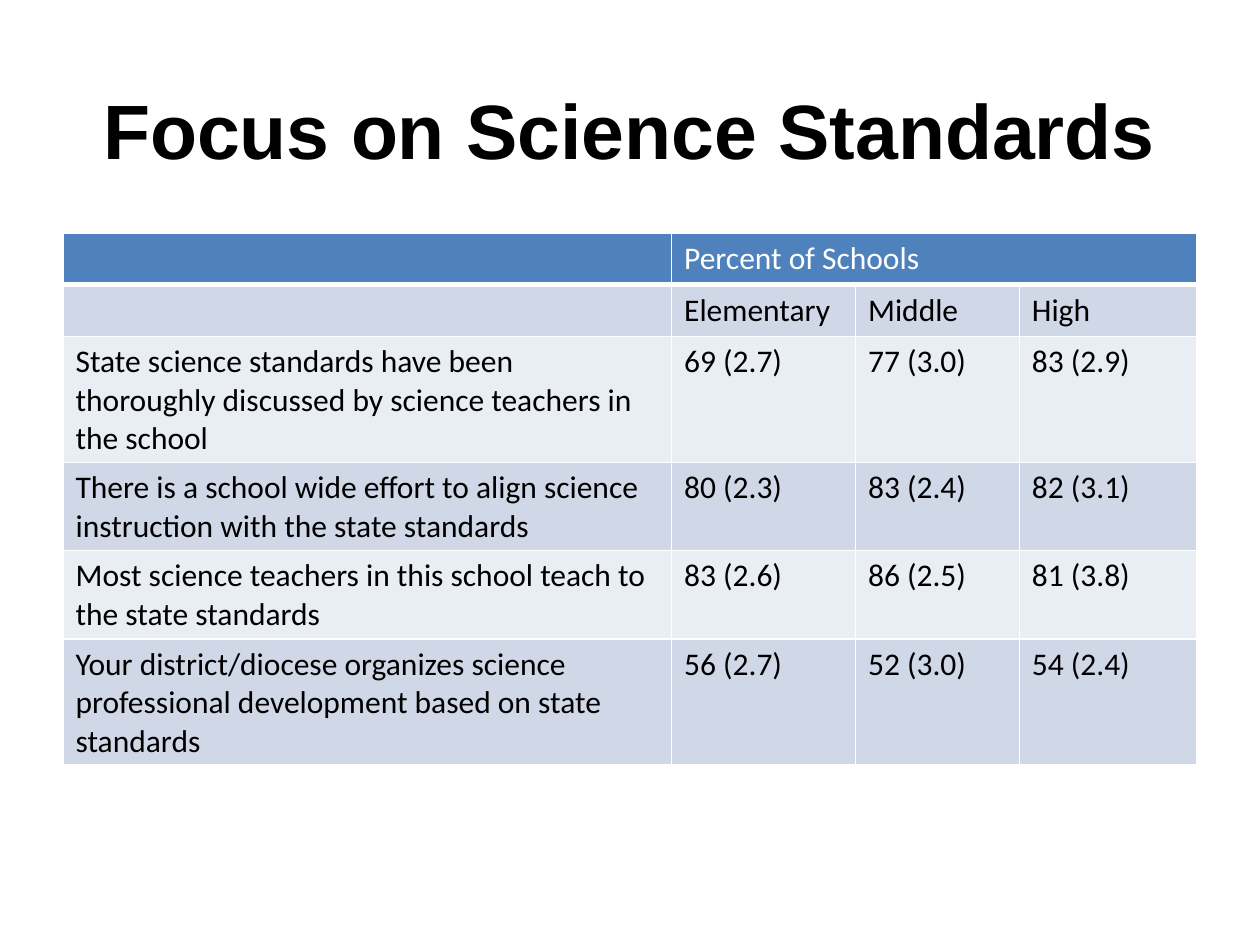
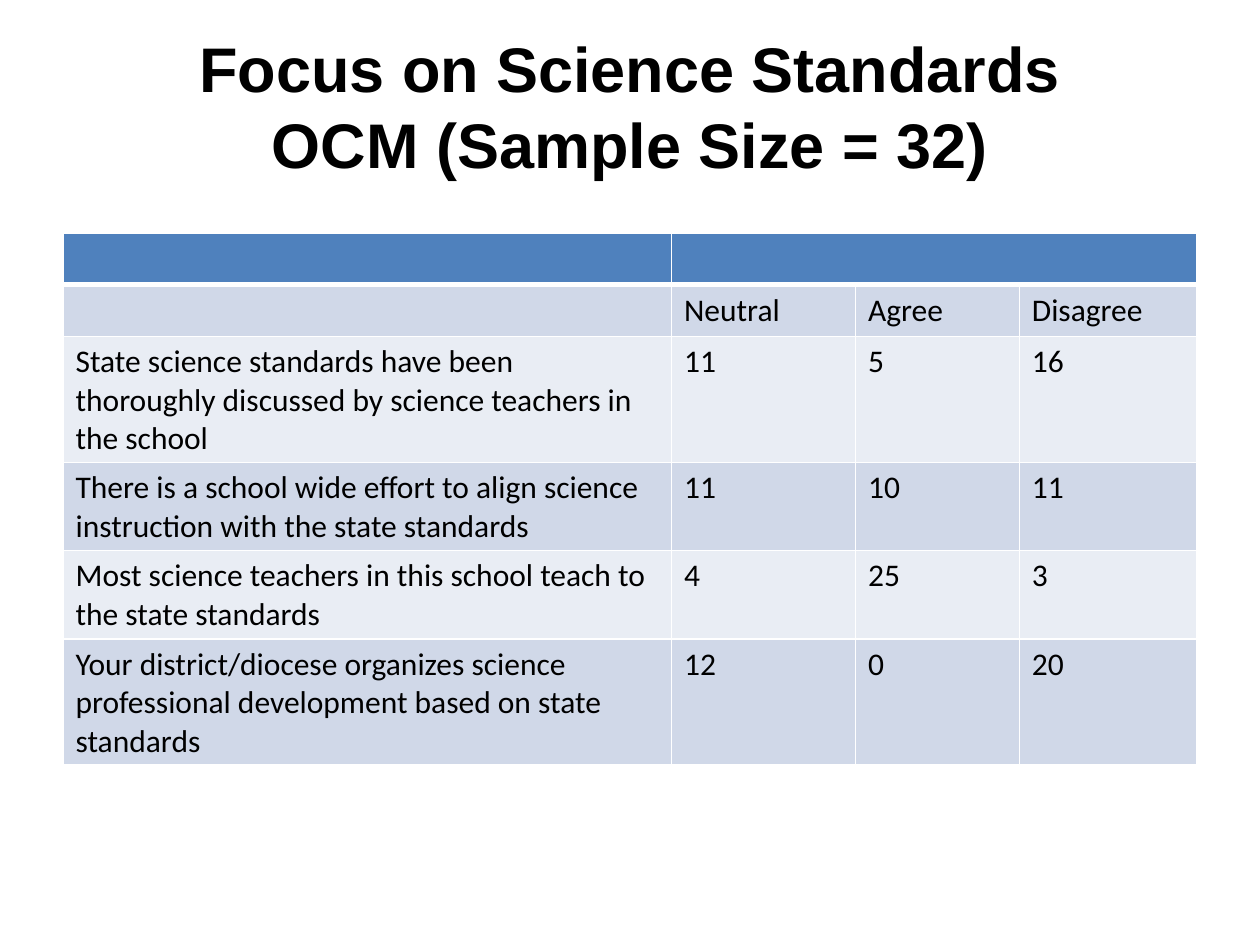
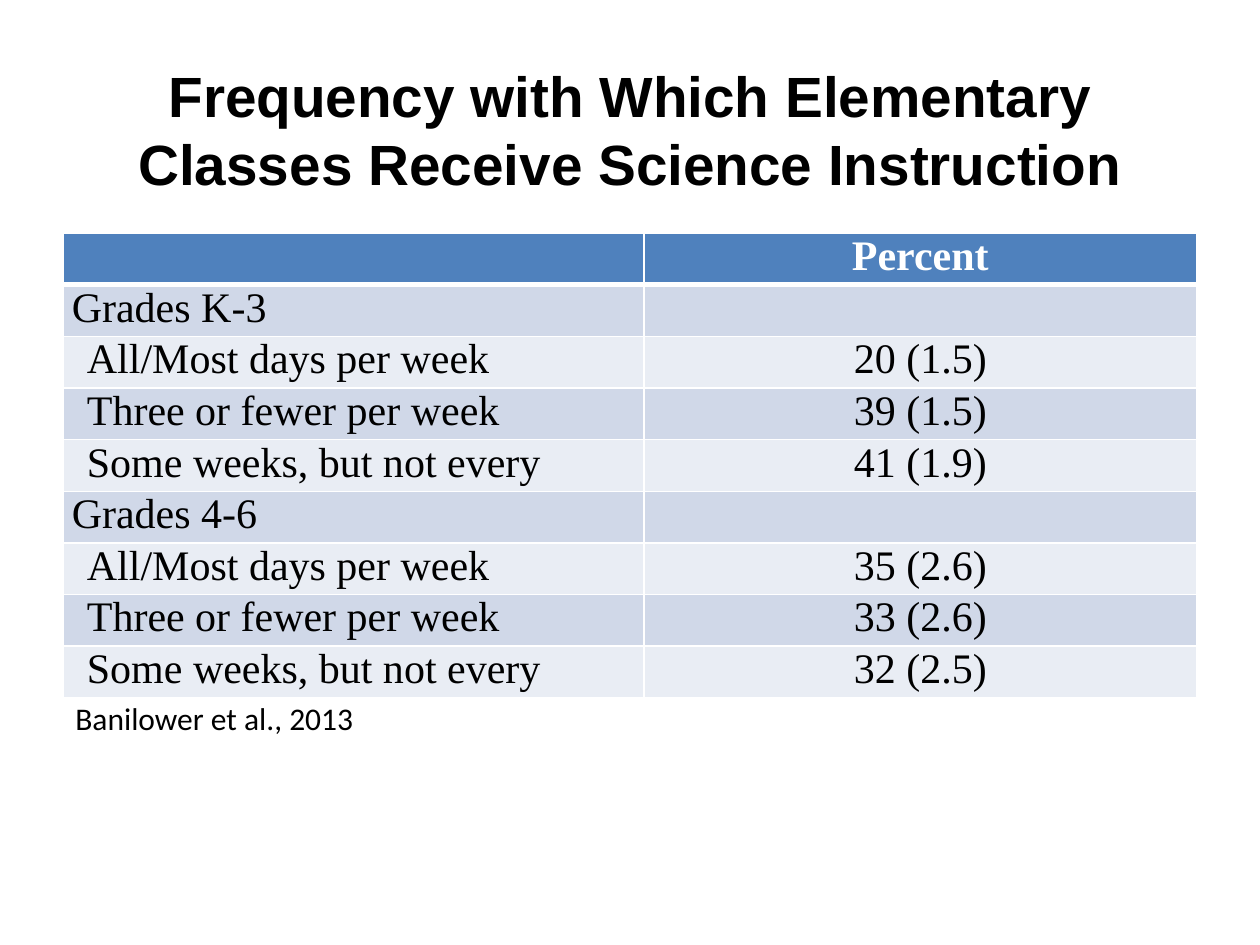
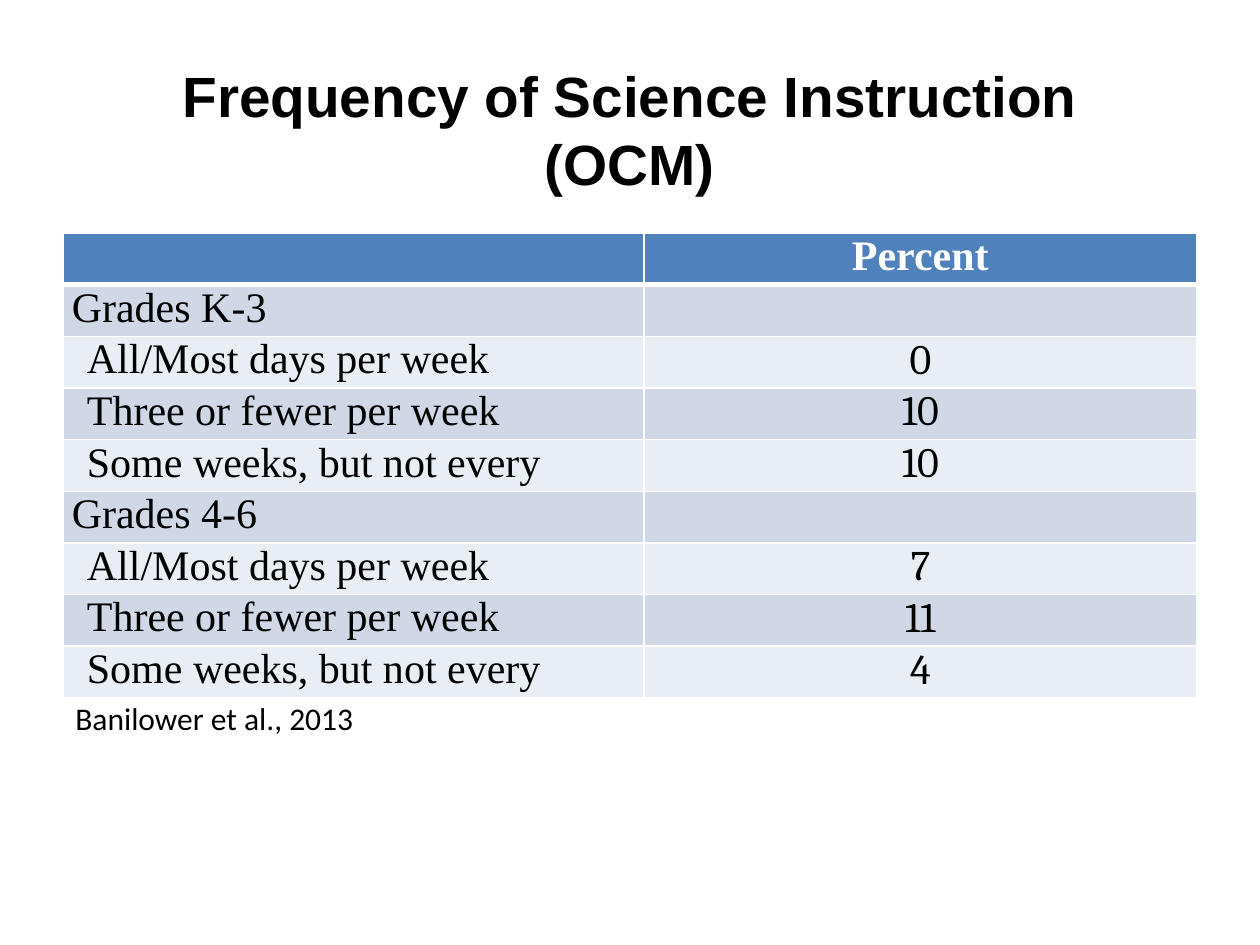
from dataclasses import dataclass

from lxml import etree
from pptx import Presentation
from pptx.dml.color import RGBColor
from pptx.enum import text as t
from pptx.oxml import ns
from pptx.util import Inches, Pt

BLACK = RGBColor(0x00, 0x00, 0x00)
WHITE = RGBColor(0xFF, 0xFF, 0xFF)
HEADER_BLUE = RGBColor(0x4F, 0x81, 0xBD)
BAND_DARK = RGBColor(0xD0, 0xD8, 0xE8)
BAND_LIGHT = RGBColor(0xE9, 0xED, 0xF4)

LEFT, TABLE_TOP, WIDTH = 0.5, 1.85, 9
THIN, THICK = 1, 3


@dataclass(frozen=True)
class Font:
    name: str
    size: float
    bold: bool = False
    color: RGBColor = BLACK


@dataclass(frozen=True)
class Title:
    lines: tuple[str, ...]
    size: float
    top: float = 0.4
    height: float = 1.25
    bottom_inset: float = 0.05


@dataclass(frozen=True)
class TableStyle:
    columns: tuple[float, ...]
    rows: tuple[float, ...]
    header: Font
    label: Font
    margins: tuple[float, float]
    value_align: t.PP_ALIGN
    below_header: int


@dataclass(frozen=True)
class TableSlide:
    title: Title
    style: TableStyle
    cells: list[tuple[str, ...]]
    value_font: Font
    merge_header: bool = False
    indented: tuple[str, ...] = ()
    source: str = ""


CALIBRI = Font("Calibri", 18)
TIMES = Font("Times New Roman", 24)
CAMBRIA = Font("Cambria", 24)

STANDARDS_STYLE = TableStyle(
    columns=(4.83, 1.46, 1.3, 1.41),
    rows=(0.41, 0.41, 1, 0.7, 0.7, 1),
    header=Font("Calibri", 18, color=WHITE),
    label=CALIBRI,
    margins=(0.1, 0.05),
    value_align=t.PP_ALIGN.LEFT,
    below_header=THIN,
)
FREQUENCY_STYLE = TableStyle(
    columns=(4.61, 4.39),
    rows=(0.41,) * 9,
    header=Font("Times New Roman", 24, True, WHITE),
    label=TIMES,
    margins=(0.07, 0),
    value_align=t.PP_ALIGN.CENTER,
    below_header=THICK,
)

STATEMENTS = (
    "State science standards have been thoroughly discussed by science teachers in the school",
    "There is a school wide effort to align science instruction with the state standards",
    "Most science teachers in this school teach to the state standards",
    "Your district/diocese organizes science professional development based on state standards",
)
GRADES = ("Grades K-3", "Grades 4-6")
FREQUENCIES = ("All/Most days per week", "Three or fewer per week", "Some weeks, but not every")
SOURCE = "Banilower et al., 2013"


def standards_slide(title: Title, heading: str, groups: tuple[str, ...],
                    values: list[tuple[str, ...]]) -> TableSlide:
    cells = [("", heading, "", ""), ("", *groups)]
    cells += [(statement, *row) for statement, row in zip(STATEMENTS, values)]
    return TableSlide(title, STANDARDS_STYLE, cells, CALIBRI, merge_header=True)


def frequency_slide(title: Title, values: list[tuple[str, ...]], value_font: Font) -> TableSlide:
    cells = [("", "Percent")]
    for grade, percents in zip(GRADES, values):
        cells += [(grade, ""), *zip(FREQUENCIES, percents)]
    return TableSlide(title, FREQUENCY_STYLE, cells, value_font,
                      indented=FREQUENCIES, source=SOURCE)


SLIDES = [
    standards_slide(
        Title(("Focus on Science Standards",), 44),
        "Percent of Schools", ("Elementary", "Middle", "High"),
        [("69 (2.7)", "77 (3.0)", "83 (2.9)"), ("80 (2.3)", "83 (2.4)", "82 (3.1)"),
         ("83 (2.6)", "86 (2.5)", "81 (3.8)"), ("56 (2.7)", "52 (3.0)", "54 (2.4)")],
    ),
    standards_slide(
        Title(("Focus on Science Standards", "OCM (Sample Size = 32)"), 36, 0.51, 1.19, 0.59),
        "", ("Neutral", "Agree", "Disagree"),
        [("11", "5", "16"), ("11", "10", "11"), ("4", "25", "3"), ("12", "0", "20")],
    ),
    frequency_slide(
        Title(("Frequency with Which Elementary Classes Receive Science Instruction",), 32.4),
        [("20 (1.5)", "39 (1.5)", "41 (1.9)"), ("35 (2.6)", "33 (2.6)", "32 (2.5)")], TIMES,
    ),
    frequency_slide(
        Title(("Frequency of Science Instruction", "(OCM)"), 32.4),
        [("0", "10", "10"), ("7", "11", "4")], CAMBRIA,
    ),
]


def add_run(paragraph, content: str, font: Font) -> None:
    run = paragraph.add_run()
    run.text = content
    run.font.name = font.name
    run.font.size = Pt(font.size)
    run.font.bold = font.bold
    run.font.color.rgb = font.color


def add_title(slide, title: Title) -> None:
    shape = slide.shapes.add_textbox(
        Inches(LEFT), Inches(title.top), Inches(WIDTH), Inches(title.height))
    frame = shape.text_frame
    frame.word_wrap = True
    frame.vertical_anchor = t.MSO_ANCHOR.MIDDLE
    frame.margin_bottom = Inches(title.bottom_inset)
    paragraph = frame.paragraphs[0]
    paragraph.alignment = t.PP_ALIGN.CENTER
    for index, line in enumerate(title.lines):
        if index:
            paragraph.add_line_break()
        add_run(paragraph, line, Font("Arial", title.size, True))


def add_source(slide, content: str) -> None:
    shape = slide.shapes.add_textbox(Inches(LEFT), Inches(5.5), Inches(2.43), Inches(0.4))
    shape.text_frame.word_wrap = False
    shape.text_frame.auto_size = t.MSO_AUTO_SIZE.SHAPE_TO_FIT_TEXT
    add_run(shape.text_frame.paragraphs[0], content, CALIBRI)


def set_borders(cell, top: int, bottom: int) -> None:
    properties = cell._tc.get_or_add_tcPr()
    for side, width in (("L", THIN), ("R", THIN), ("T", top), ("B", bottom)):
        line = etree.SubElement(properties, ns.qn(f"a:ln{side}"), w=str(Pt(width)))
        fill = etree.SubElement(line, ns.qn("a:solidFill"))
        etree.SubElement(fill, ns.qn("a:srgbClr"), val=str(WHITE))


def fill_cell(cell, row: int, column: int, content: str, data: TableSlide) -> None:
    style = data.style
    cell.margin_left = cell.margin_right = Inches(style.margins[0])
    cell.margin_top = cell.margin_bottom = Inches(style.margins[1])
    set_borders(cell, style.below_header if row == 1 else THIN, THIN if row else THICK)
    cell.fill.solid()
    cell.fill.fore_color.rgb = (BAND_DARK if row % 2 else BAND_LIGHT) if row else HEADER_BLUE
    if not content:
        return
    paragraph = cell.text_frame.paragraphs[0]
    if column:
        paragraph.alignment = style.value_align
    if content in data.indented:
        paragraph._p.get_or_add_pPr().set("marL", str(Inches(0.12)))
    body_font = data.value_font if column else style.label
    add_run(paragraph, content, body_font if row else style.header)


def add_data_table(slide, data: TableSlide) -> None:
    style = data.style
    table = slide.shapes.add_table(
        len(style.rows), len(style.columns), Inches(LEFT), Inches(TABLE_TOP),
        Inches(WIDTH), Inches(sum(style.rows))).table
    table.first_row = table.horz_banding = False
    for column, width in zip(table.columns, style.columns):
        column.width = Inches(width)
    for row, height in zip(table.rows, style.rows):
        row.height = Inches(height)
    if data.merge_header:
        table.cell(0, 1).merge(table.cell(0, len(style.columns) - 1))
    for row, contents in enumerate(data.cells):
        for column, content in enumerate(contents):
            fill_cell(table.cell(row, column), row, column, content, data)


def main() -> None:
    presentation = Presentation()
    presentation.slide_width = Inches(10)
    presentation.slide_height = Inches(7.5)
    for data in SLIDES:
        slide = presentation.slides.add_slide(presentation.slide_layouts[6])
        add_title(slide, data.title)
        add_data_table(slide, data)
        if data.source:
            add_source(slide, data.source)
    presentation.save("out.pptx")


if __name__ == "__main__":
    main()
